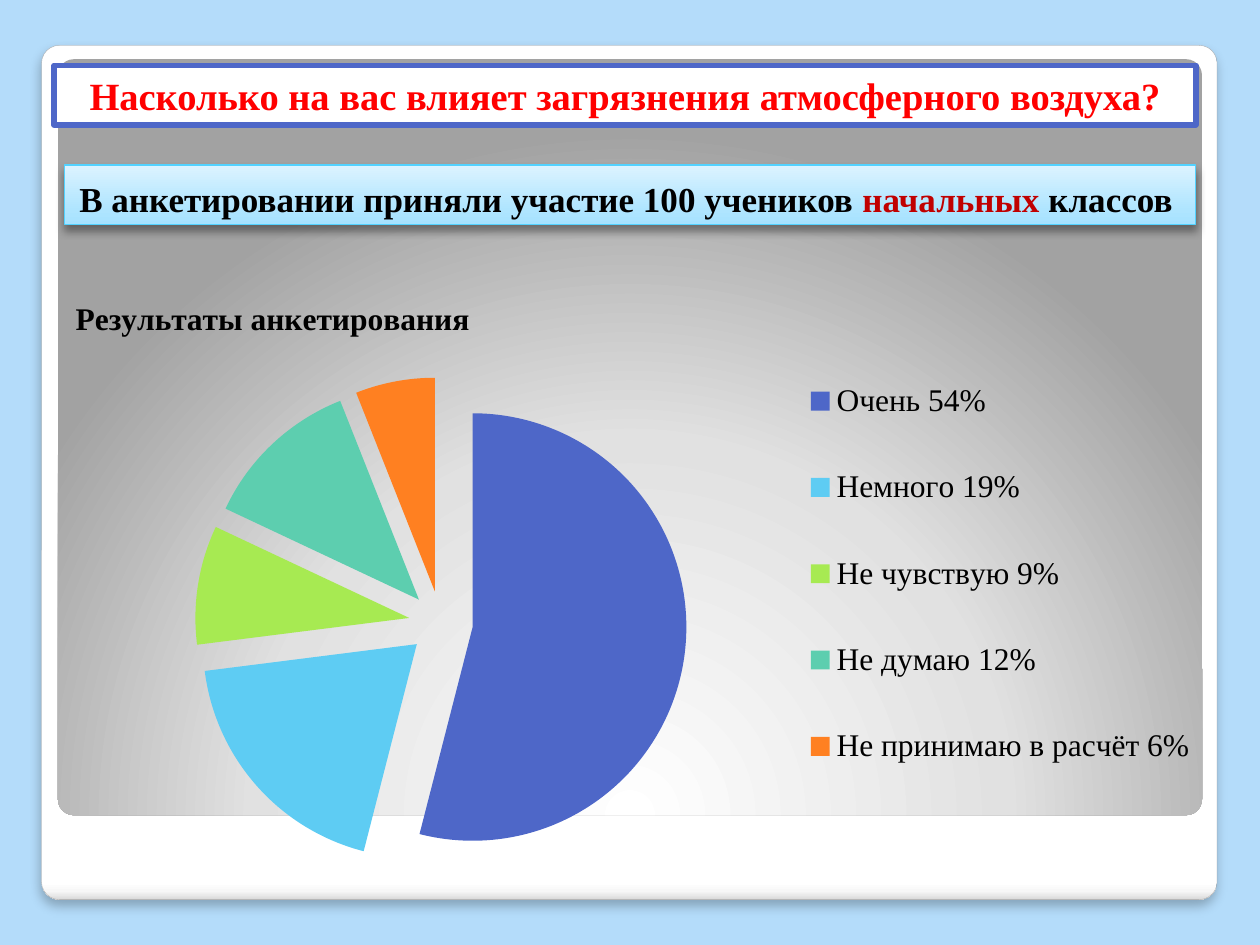
import pptx
import pptx.chart.data
import pptx.dml.color
import pptx.enum.chart
import pptx.enum.shapes
import pptx.enum.text
import pptx.oxml
import pptx.oxml.ns
import pptx.util
from pptx.util import Inches, Pt

NS = pptx.oxml.ns.nsdecls("a")
CHART_NS = pptx.oxml.ns.nsdecls("c")
RADIAL = '<a:path path="circle"><a:fillToRect l="50000" t="175000" r="50000" b="-75000"/></a:path>'


def color(value):
    return pptx.dml.color.RGBColor.from_string(value)


class SlideBuilder:
    font = "Times New Roman"

    def __init__(self, deck, layout, background):
        self.page = deck.slides.add_slide(deck.slide_layouts[layout])
        fill = self.page.background.fill
        fill.solid()
        fill.fore_color.rgb = color(background)

    def paint(self, shape, fill, line=None, width=0):
        shape.fill.solid()
        shape.fill.fore_color.rgb = color(fill)
        if line:
            shape.line.color.rgb = color(line)
            shape.line.width = Pt(width)
        else:
            shape.line.fill.background()
        shape.shadow.inherit = False

    def gradient(self, shape, stops, direction):
        marks = "".join(
            f'<a:gs pos="{place * 1000}"><a:srgbClr val="{value}"/></a:gs>' for place, value in stops
        )
        gradient = pptx.oxml.parse_xml(
            f'<a:gradFill {NS} rotWithShape="1"><a:gsLst>{marks}</a:gsLst>{direction}</a:gradFill>'
        )
        solid = shape.element.spPr.find(pptx.oxml.ns.qn("a:solidFill"))
        solid.getparent().replace(solid, gradient)

    def linear(self, shape, stops, angle):
        self.gradient(shape, stops, f'<a:lin ang="{angle * 60000}" scaled="0"/>')

    def shadow(self, shape, alpha, blur, distance):
        effects = shape.element.spPr.find(pptx.oxml.ns.qn("a:effectLst"))
        effects.append(pptx.oxml.parse_xml(
            f'<a:outerShdw {NS} blurRad="{Pt(blur)}" dist="{Pt(distance)}" dir="5400000" '
            f'algn="t" rotWithShape="0"><a:srgbClr val="000000"><a:alpha val="{alpha * 1000}"/>'
            f'</a:srgbClr></a:outerShdw>'
        ))

    def place(self, shape, left, top, width, height):
        shape.left, shape.top = Inches(left), Inches(top)
        shape.width, shape.height = Inches(width), Inches(height)

    def panel(self, left, top, width, height, line=None, line_width=0):
        panel = self.page.shapes.add_shape(
            pptx.enum.shapes.MSO_SHAPE.ROUNDED_RECTANGLE,
            Inches(left), Inches(top), Inches(width), Inches(height),
        )
        panel.adjustments[0] = 0.021
        self.paint(panel, "FFFFFF", line, line_width)
        return panel

    def text(self, index, bounds, runs, size, align, anchor, line, width, inset_top=0.05):
        box = self.page.placeholders[index]
        self.page.shapes.element.append(box.element)
        self.place(box, *bounds)
        self.paint(box, "FFFFFF", line, width)
        frame = box.text_frame
        frame.word_wrap = True
        frame.auto_size = pptx.enum.text.MSO_AUTO_SIZE.NONE
        frame.vertical_anchor = anchor
        frame.margin_top = Inches(inset_top)
        frame.margin_bottom = Inches(0.05)
        para = frame.paragraphs[0]
        para.alignment = align
        for words, value in runs:
            span = para.add_run()
            span.text = words
            span.font.name = self.font
            span.font.size = Pt(size)
            span.font.bold = True
            span.font.color.rgb = color(value)
        return box

    def unbullet(self, box, indent):
        properties = box.text_frame.paragraphs[0]._p.get_or_add_pPr()
        properties.set("marL", str(Inches(indent)))
        properties.set("indent", "0")
        properties.append(pptx.oxml.parse_xml(f"<a:buNone {NS}/>"))

    def chart_layout(self, chart, part, index, values, inner=False):
        element = chart.element.xpath(f"c:chart/c:{part}")[0]
        for old in element.findall(pptx.oxml.ns.qn("c:layout")):
            element.remove(old)
        target = '<c:layoutTarget val="inner"/>' if inner else ""
        modes = '<c:xMode val="edge"/><c:yMode val="edge"/>'
        sizes = "".join(f'<c:{key} val="{value}"/>' for key, value in zip("xywh", values))
        element.insert(index, pptx.oxml.parse_xml(
            f"<c:layout {CHART_NS}><c:manualLayout>{target}{modes}{sizes}"
            f"</c:manualLayout></c:layout>"
        ))

    def pie(self, bounds, title, slices, size, explosion):
        data = pptx.chart.data.CategoryChartData()
        data.categories = [name for name, value, shade in slices]
        data.add_series("Series 1", [value for name, value, shade in slices])
        chart = self.page.shapes.add_chart(
            pptx.enum.chart.XL_CHART_TYPE.PIE, *map(Inches, bounds), data
        ).chart
        chart.font.name = self.font
        chart.font.size = Pt(size)
        chart.font.color.rgb = color("000000")

        chart.has_title = True
        span = chart.chart_title.text_frame.paragraphs[0].add_run()
        span.text = title
        span.font.name = self.font
        span.font.size = Pt(size)
        span.font.bold = True
        span.font.color.rgb = color("000000")

        chart.has_legend = True
        chart.legend.position = pptx.enum.chart.XL_LEGEND_POSITION.RIGHT
        chart.legend.include_in_layout = False
        plot = chart.plots[0]
        plot.vary_by_categories = True
        series = plot.series[0]
        for index, (name, value, shade) in enumerate(slices):
            fill = series.points[index].format.fill
            fill.solid()
            fill.fore_color.rgb = color(shade)
        chart.element.xpath(".//c:ser/c:tx")[0].addnext(
            pptx.oxml.parse_xml(f'<c:explosion {CHART_NS} val="{explosion}"/>')
        )
        self.chart_layout(chart, "title", 1, (0.005, 0.016))
        self.chart_layout(chart, "plotArea", 0, (0.017, 0.155, 0.626, 0.813), inner=True)
        self.chart_layout(chart, "legend", 1, (0.645, 0.08, 0.35, 0.8))


def main():
    deck = pptx.Presentation()
    deck.slide_width, deck.slide_height = Inches(10), Inches(7.5)
    builder = SlideBuilder(deck, 1, "B4DCFA")

    card = builder.panel(0.33, 0.36, 9.33, 6.78, "A4A4A4", 0.16)
    builder.linear(card, [(0, "FFFFFF"), (98, "FFFFFF"), (99, "F7F7F7"), (100, "DADADA")], 90)
    builder.shadow(card, 25, 6, 4)
    backdrop = builder.panel(0.46, 0.47, 9.08, 6)
    builder.gradient(backdrop, [(0, "FFFFFF"), (55, "E1E1E1"), (100, "A2A2A2")], RADIAL)

    align, anchor = pptx.enum.text.PP_ALIGN, pptx.enum.text.MSO_ANCHOR
    question = [("Насколько на вас влияет загрязнения атмосферного воздуха?", "FF0000")]
    builder.text(0, (0.43, 0.52, 9.06, 0.47), question, 22,
                 align.CENTER, anchor.BOTTOM, "4E67C8", 3.35)
    sample = [
        ("В анкетировании приняли участие 100 учеников ", "000000"),
        ("начальных", "C00000"),
        (" классов", "000000"),
    ]
    banner = builder.text(1, (0.51, 1.31, 8.98, 0.47), sample, 20,
                          align.LEFT, anchor.TOP, "52D2FF", 0.75, inset_top=0.1)
    builder.unbullet(banner, 0.02)
    builder.linear(banner, [(0, "A6E2FF"), (25, "AFE5FF"), (100, "DCF3FF")], 270)
    builder.shadow(banner, 40, 5.2, 3)

    answers = [
        ("Очень 54%", 54, "4E67C8"),
        ("Немного 19%", 19, "5ECCF3"),
        ("Не чувствую 9%", 9, "A7EA52"),
        ("Не думаю 12%", 12, "5DCEAF"),
        ("Не принимаю в расчёт 6%", 6, "FF8021"),
    ]
    builder.pie((0.51, 2.25, 9.06, 4.8), "Результаты анкетирования ", answers, 18, 15)
    deck.save("out.pptx")


if __name__ == "__main__":
    main()
